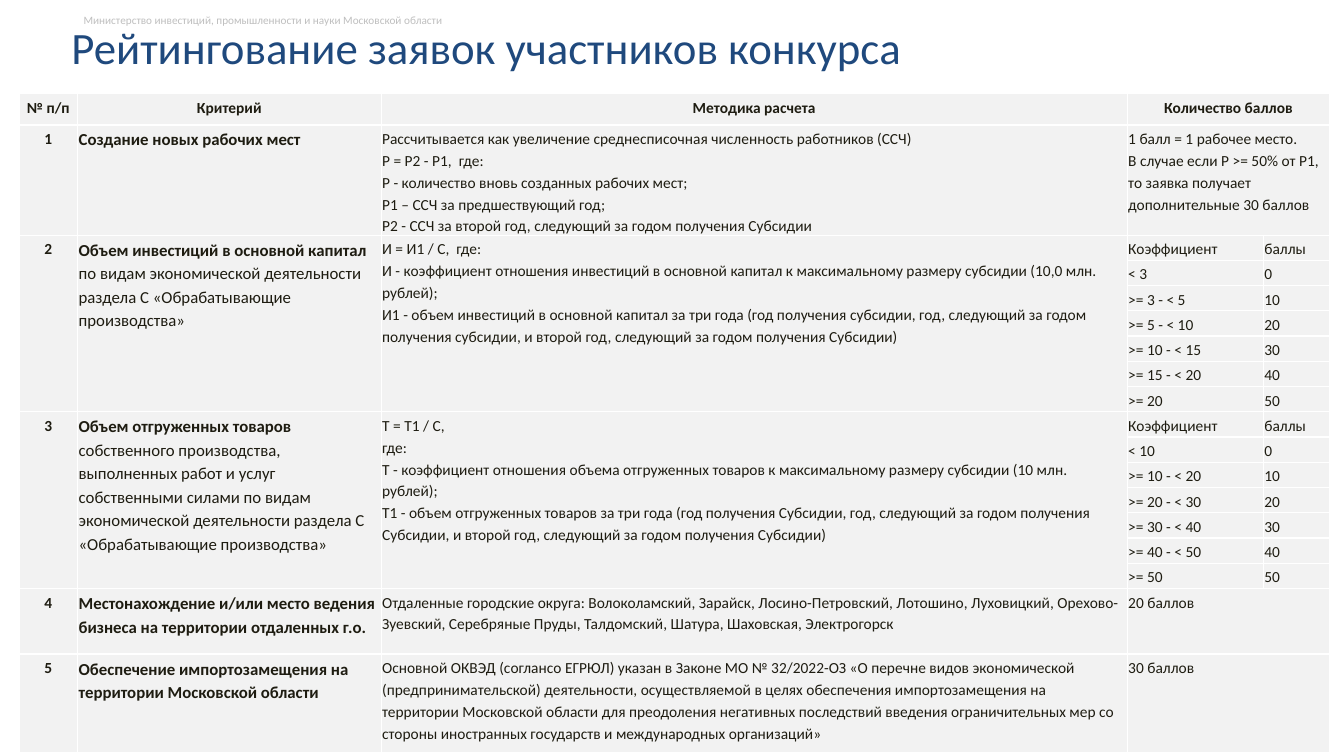
import pptx
import pptx.util
import pptx.dml.color
import pptx.enum.text
import pptx.oxml
from pptx.util import Inches

NAVY = pptx.dml.color.RGBColor(0x1F, 0x49, 0x7D)
SILVER = pptx.dml.color.RGBColor(0xBF, 0xBF, 0xBF)
INK = pptx.dml.color.RGBColor(0x1E, 0x1C, 0x11)
PALE = pptx.dml.color.RGBColor(0xF2, 0xF2, 0xF2)
WHITE = pptx.dml.color.RGBColor(0xFF, 0xFF, 0xFF)
CENTER = pptx.enum.text.PP_ALIGN.CENTER
FONT = "Calibri"
NS = 'xmlns:a="http://schemas.openxmlformats.org/drawingml/2006/main"'

HEADS = ["№ п/п", "Критерий", "Методика расчета", "Количество баллов"]

# Each rule: bold topic, plain detail, method lines, score lines or a scale of limits
RULES = [
    ("Создание новых рабочих мест", "",
     ["Рассчитывается как увеличение среднесписочная численность работников (ССЧ)",
      "Р = Р2 - Р1,  где:",
      "Р - количество вновь созданных рабочих мест;",
      "Р1 – ССЧ за предшествующий год;",
      "Р2 - ССЧ за второй год, следующий за годом получения Субсидии"],
     ["1 балл = 1 рабочее место.",
      "В случае если Р >= 50% от Р1, то заявка получает дополнительные 30 баллов"]),
    ("Объем инвестиций в основной капитал ",
     "по видам экономической деятельности раздела C «Обрабатывающие производства»",
     ["И = И1 / С,  где:",
      "И - коэффициент отношения инвестиций в основной капитал к максимальному "
      "размеру субсидии (10,0 млн. рублей);",
      "И1 - объем инвестиций в основной капитал за три года (год получения субсидии, "
      "год, следующий за годом получения субсидии, и второй год, следующий за годом "
      "получения Субсидии)"],
     (3, 5, 10, 15, 20)),
    ("Объем отгруженных товаров ",
     "собственного производства, выполненных работ и услуг собственными силами "
     "по видам экономической деятельности раздела C «Обрабатывающие производства»",
     ["Т = Т1 / С,  ",
      "где:",
      "Т - коэффициент отношения объема отгруженных товаров к максимальному "
      "размеру субсидии (10 млн. рублей);",
      "Т1 - объем отгруженных товаров за три года (год получения Субсидии, год, "
      "следующий за годом получения Субсидии, и второй год, следующий за годом "
      "получения Субсидии)"],
     (10, 20, 30, 40, 50)),
    ("Местонахождение и/или место ведения бизнеса на территории отдаленных г.о.", "",
     ["Отдаленные городские округа: Волоколамский, Зарайск, Лосино-Петровский, "
      "Лотошино, Луховицкий, Орехово-Зуевский, Серебряные Пруды, Талдомский, "
      "Шатура, Шаховская, Электрогорск"],
     ["20 баллов"]),
    ("Обеспечение импортозамещения на территории Московской области", "",
     ["Основной ОКВЭД (соглансо ЕГРЮЛ) указан в Законе МО № 32/2022-ОЗ «О перечне "
      "видов экономической (предпринимательской) деятельности, осуществляемой в целях "
      "обеспечения импортозамещения на территории Московской области для преодоления "
      "негативных последствий введения ограничительных мер со стороны иностранных "
      "государств и международных организаций»"],
     ["30 баллов"]),
]


def label(text, left, top, width, height, size, color):
    """Add a one-line text box."""
    box = slide.shapes.add_textbox(Inches(left), Inches(top), Inches(width), Inches(height))
    box.text_frame.word_wrap = True
    line = box.text_frame.paragraphs[0]
    line.text = text
    line.font.name, line.font.size = FONT, pptx.util.Pt(size)
    line.font.color.rgb = color


def write(row, col, lines, size=11, bold=False, align=None):
    """Fill a table cell with paragraphs and return the last one."""
    frame = grid.cell(row, col).text_frame
    frame.text = "\n".join(lines)
    for line in frame.paragraphs:
        line.alignment, line.line_spacing = align, 1.15
        line.font.name, line.font.size = FONT, pptx.util.Pt(size)
        line.font.color.rgb = INK
        if bold is not None:
            line.font.bold = bold
    return line


deck = pptx.Presentation()
deck.slide_width, deck.slide_height = Inches(13.33), Inches(7.5)
slide = deck.slides.add_slide(deck.slide_layouts[6])

label("Министерство инвестиций, промышленности и науки Московской области",
      0.73, 0.08, 5.65, 0.24, 8, SILVER)
label("Рейтингование заявок участников конкурса", 0.61, 0.15, 11.77, 0.64, 32, NAVY)

widths = [0.58, 3.01, 7.4, 1.35, 0.66]
heights = [0.31, 1.06] + [0.23] * 14 + [0.65, 0.98]
grid = slide.shapes.add_table(len(heights), len(widths), Inches(0.19), Inches(0.93),
                              Inches(sum(widths)), Inches(sum(heights))).table
grid.first_row = grid.horz_banding = False
for col, width in zip(grid.columns, widths):
    col.width = Inches(width)
for row, height in zip(grid.rows, heights):
    row.height = Inches(height)

for cell in grid.iter_cells():
    cell.margin_left = cell.margin_right = Inches(0.01)
    cell.margin_top = cell.margin_bottom = Inches(0.02)
    cell.fill.solid()
    cell.fill.fore_color.rgb = PALE
    props = cell._tc.get_or_add_tcPr()
    for place, side in enumerate("LRTB"):
        props.insert(place, pptx.oxml.parse_xml(
            f'<a:ln{side} {NS} w="12700"><a:solidFill><a:srgbClr val="{WHITE}"/>'
            f'</a:solidFill></a:ln{side}>'))

for col, head in enumerate(HEADS):
    write(0, col, [head], bold=True, align=CENTER)
grid.cell(0, 3).merge(grid.cell(0, 4))

top = 1
for number, (topic, detail, method, score) in enumerate(RULES, 1):
    write(top, 0, [str(number)], bold=True, align=CENTER)
    if detail:
        line = write(top, 1, [topic], size=12, bold=None)
        line.runs[0].font.bold = True
        line.add_run().text = detail
    else:
        write(top, 1, [topic], size=12, bold=True)
    write(top, 2, method)
    if isinstance(score, tuple):
        bands = [f">= {low} - < {high}" for low, high in zip(score, score[1:])]
        scale = ["Коэффициент", f"< {score[0]}", *bands, f">= {score[-1]}"]
        for step, band in enumerate(scale):
            write(top + step, 3, [band])
            write(top + step, 4, [str(step * 10 - 10) if step else "баллы"])
        last = top + len(scale) - 1
        for col in range(3):
            grid.cell(top, col).merge(grid.cell(last, col))
    else:
        write(top, 3, score)
        grid.cell(top, 3).merge(grid.cell(top, 4))
        last = top
    top = last + 1

deck.save("out.pptx")
